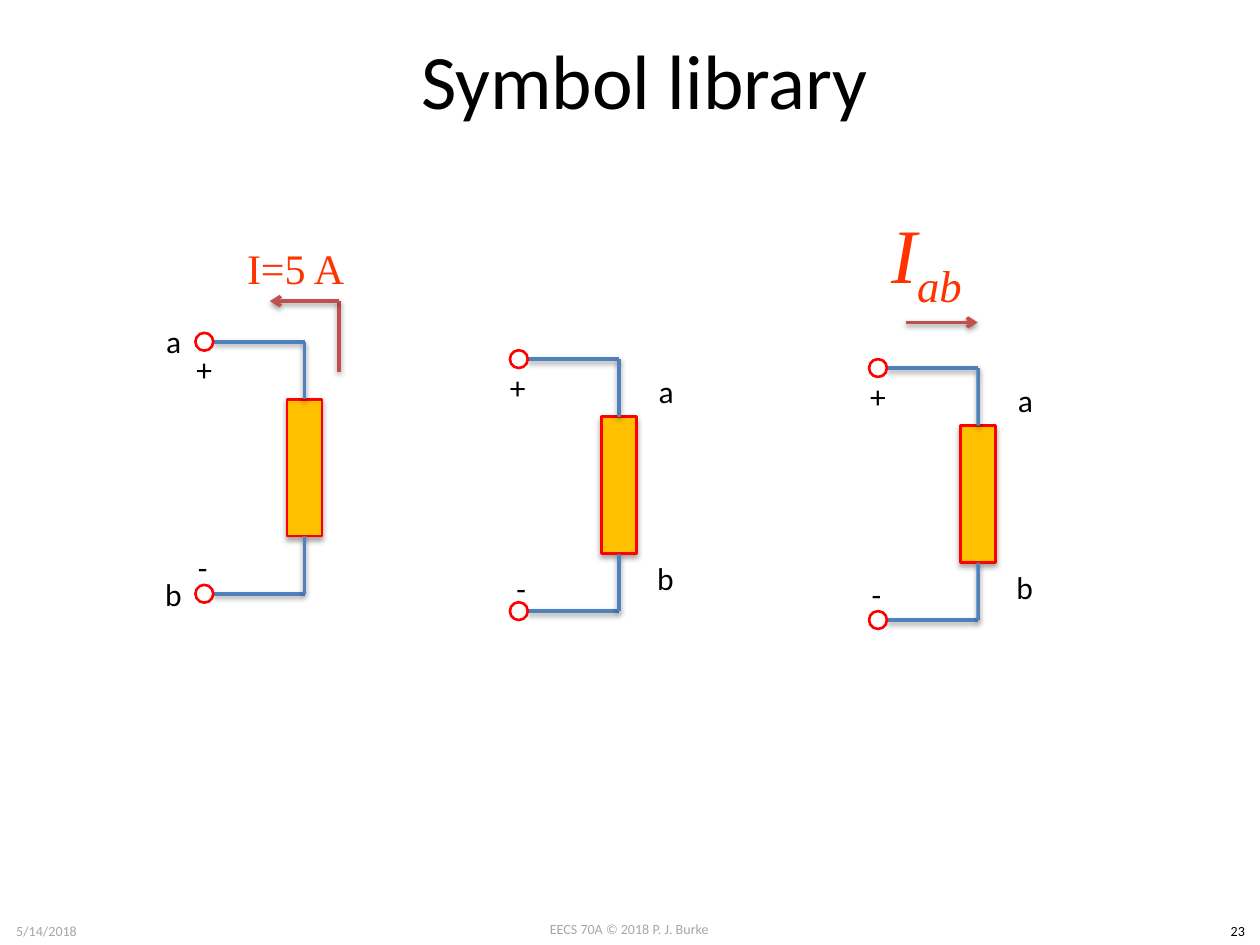
from dataclasses import dataclass

from lxml import etree
from pptx import Presentation
from pptx.dml.color import RGBColor
from pptx.enum.shapes import MSO_CONNECTOR, MSO_SHAPE
from pptx.enum.text import MSO_ANCHOR, PP_ALIGN
from pptx.oxml.ns import qn
from pptx.util import Cm, Pt

STRAIGHT = MSO_CONNECTOR.STRAIGHT
RECTANGLE, OVAL = MSO_SHAPE.RECTANGLE, MSO_SHAPE.OVAL
LEFT, CENTER = PP_ALIGN.LEFT, PP_ALIGN.CENTER
TOP, MIDDLE = MSO_ANCHOR.TOP, MSO_ANCHOR.MIDDLE
TOP_SITE, BOTTOM_SITE = 0, 2


@dataclass(frozen=True)
class Theme:
    body_font: str = "Calibri"
    math_font: str = "Times New Roman"
    ink: str = "000000"
    muted: str = "A6A6A6"
    current: str = "FF3300"
    arrow: str = "C0504D"
    wire: str = "4F81BD"
    outline: str = "FF0000"
    body: str = "FFC000"
    title_size: int = 44
    caption_size: int = 24
    label_size: int = 18
    footer_size: int = 8
    wire_width: float = 2
    outline_width: float = 1.5


THEME = Theme()

# All lengths are in centimetres.
TITLE = ("Symbol library", (1.57, 0, 22.86, 3.18))
FOOTERS = [
    ("EECS 70A © 2018 P. J. Burke", (9.73, 18.44, 5.92, 0.61), THEME.muted),
    ("5/14/2018", (0, 18.47, 1.88, 0.61), THEME.muted),
    ("23", (24.51, 18.47, 0.89, 0.61), THEME.ink),
]

# Terminal is the centre of the upper circle; labels are offsets from it.
SYMBOLS = [
    {
        "terminal": (4.12, 6.89),
        "labels": {"a": (-1.02, -0.53), "b": (-1.04, 4.57),
                   "+": (-0.41, 0.05), "-": (-0.38, 4.04)},
        "arrow": [(6.83, 7.49), (6.83, 6.07), (5.44, 6.07)],
        "caption": ("I=5 A", "", THEME.caption_size, False, (4.45, 4.47, 3.02, 1.85)),
    },
    {
        "terminal": (10.46, 7.24),
        "labels": {"a": (2.57, 0.13), "b": (2.54, 3.91),
                   "+": (-0.43, 0.05), "-": (-0.3, 4.11)},
    },
    {
        "terminal": (17.7, 7.42),
        "labels": {"a": (2.57, 0.13), "b": (2.54, 3.91),
                   "+": (-0.41, 0.05), "-": (-0.38, 4.04)},
        "arrow": [(18.26, 6.5), (19.71, 6.5)],
        "caption": ("I", "ab", THEME.title_size, True, (17.09, 3.94, 3.18, 2.57)),
    },
]
LABEL_WIDTHS = {"a": 0.81, "b": 0.86, "+": 0.84, "-": 0.71}
LABEL_HEIGHT = 1.02
RADIUS = 0.18
REACH = 2.02
SPAN = 5.08
LEAD = 1.16
BODY_WIDTH = 0.71


def color(value):
    return RGBColor.from_string(value)


def add_text(shapes, text, box, size, ink, font=THEME.body_font,
             align=CENTER, anchor=TOP, wrap=True):
    text_box = shapes.add_textbox(*map(Cm, box))
    frame = text_box.text_frame
    frame.text = text
    frame.word_wrap = wrap
    frame.vertical_anchor = anchor
    paragraph = frame.paragraphs[0]
    paragraph.alignment = align
    style_run(paragraph.runs[0], size, ink, font)
    return text_box


def style_run(run, size, ink, font):
    run.font.size = Pt(size)
    run.font.name = font
    run.font.color.rgb = color(ink)


def add_shadow(effects, distance, opacity):
    """Fill an effect list with a soft shadow that falls straight down."""
    shadow = etree.SubElement(effects, qn("a:outerShdw"), blurRad=str(Pt(3.1)),
                              dist=str(Pt(distance)), dir="5400000",
                              rotWithShape="0")
    tint = etree.SubElement(shadow, qn("a:srgbClr"), val="000000")
    etree.SubElement(tint, qn("a:alpha"), val=str(opacity * 1000))


def add_line(shapes, start, end, ink, arrowhead=False):
    line = shapes.add_connector(STRAIGHT, *map(Cm, (*start, *end)))
    line.line.color.rgb = color(ink)
    line.line.width = Pt(THEME.wire_width)
    properties = line.element.spPr
    if arrowhead:
        etree.SubElement(properties.find(qn("a:ln")), qn("a:tailEnd"), type="arrow")
    add_shadow(etree.SubElement(properties, qn("a:effectLst")), 1.6, 38)
    return line


def add_outlined(shapes, kind, box, fill=None):
    shape = shapes.add_shape(kind, *map(Cm, box))
    shape.shadow.inherit = False
    shape.line.color.rgb = color(THEME.outline)
    shape.line.width = Pt(THEME.outline_width)
    if fill:
        shape.fill.solid()
        shape.fill.fore_color.rgb = color(fill)
    else:
        shape.fill.background()
    return shape


def add_caption(shapes, text, subscript, size, italic, box):
    text_box = add_text(shapes, text, box, size, THEME.current,
                        THEME.math_font, anchor=MIDDLE)
    paragraph = text_box.text_frame.paragraphs[0]
    if subscript:
        run = paragraph.add_run()
        run.text = subscript
        style_run(run, size, THEME.current, THEME.math_font)
        text_box.element.findall(".//" + qn("a:rPr"))[-1].set("baseline", "-25000")
    for run in paragraph.runs:
        run.font.italic = italic


def add_symbol(slide, symbol):
    """Draw a two-terminal element with its labels, arrow and caption."""
    shapes = slide.shapes.add_group_shape().shapes
    x, y = symbol["terminal"]
    corner = x + REACH
    body_box = (corner - BODY_WIDTH / 2, y + LEAD, BODY_WIDTH, SPAN - 2 * LEAD)
    body = add_outlined(shapes, RECTANGLE, body_box, THEME.body)
    add_shadow(body.element.spPr.find(qn("a:effectLst")), 1.8, 35)

    for level, inward, site in ((y, LEAD, TOP_SITE), (y + SPAN, -LEAD, BOTTOM_SITE)):
        add_line(shapes, (x + RADIUS, level), (corner, level), THEME.wire)
        lead = add_line(shapes, (corner, level), (corner, level + inward), THEME.wire)
        lead.end_connect(body, site)
        add_outlined(shapes, OVAL, (x - RADIUS, level - RADIUS, 2 * RADIUS, 2 * RADIUS))

    for text, (dx, dy) in symbol["labels"].items():
        box = (x + dx, y + dy, LABEL_WIDTHS[text], LABEL_HEIGHT)
        add_text(shapes, text, box, THEME.label_size, THEME.ink, align=LEFT, wrap=False)

    points = symbol.get("arrow", [])
    for start, end in zip(points, points[1:]):
        add_line(shapes, start, end, THEME.arrow, arrowhead=end == points[-1])
    if "caption" in symbol:
        add_caption(shapes, *symbol["caption"])


def main():
    presentation = Presentation()
    presentation.slide_width, presentation.slide_height = Cm(25.4), Cm(19.05)
    slide = presentation.slides.add_slide(presentation.slide_layouts[6])
    for text, box, ink in FOOTERS:
        add_text(slide.shapes, text, box, THEME.footer_size, ink)
    add_text(slide.shapes, *TITLE, THEME.title_size, THEME.ink, anchor=MIDDLE)
    for symbol in SYMBOLS:
        add_symbol(slide, symbol)
    presentation.save("out.pptx")


if __name__ == "__main__":
    main()
